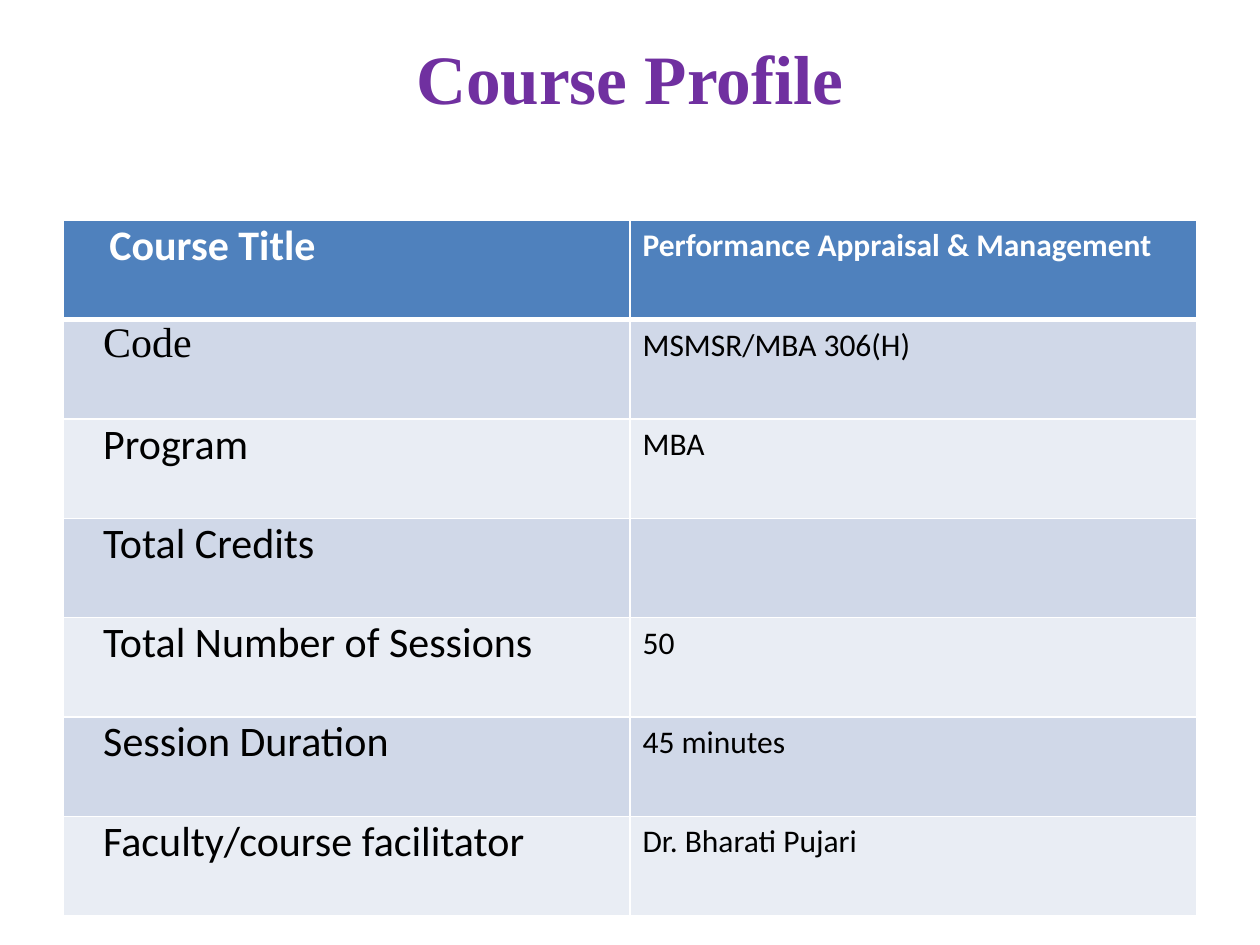
from dataclasses import dataclass

from lxml.etree import SubElement as Sub
from pptx import Presentation
from pptx.dml.color import RGBColor as Rgb
from pptx.enum.text import MSO_ANCHOR as Anchor, PP_ALIGN as Align
from pptx.oxml.ns import qn
from pptx.util import Pt


@dataclass
class Theme:
    serif: str = "Times New Roman"
    sans: str = "Calibri"
    title: str = "7030A0"
    head: str = "4F81BD"
    bands: tuple = ("D0D8E8", "E9EDF4")
    ink: str = "000000"
    white: str = "FFFFFF"
    big: float = 39.6
    label: float = 24
    value: float = 18


class Deck:
    def __init__(self, theme):
        self.theme = theme
        self.prs = Presentation()
        self.prs.slide_width, self.prs.slide_height = Pt(720), Pt(540)
        self.slide = self.prs.slides.add_slide(self.prs.slide_layouts[5])

    def style(self, para, face, size, color, bold):
        for run in para.runs:
            font = run.font
            font.name, font.size, font.bold = face, Pt(size), bold
            font.color.rgb = Rgb.from_string(color)

    def title(self, text, left, top, width, height):
        t, box = self.theme, self.slide.shapes.title
        box.left, box.top = Pt(left), Pt(top)
        box.width, box.height = Pt(width), Pt(height)
        frame = box.text_frame
        frame.text = text
        frame.vertical_anchor = Anchor.MIDDLE
        frame.margin_bottom = Pt(49)  # lifts the line above the centre
        para = frame.paragraphs[0]
        para.alignment = Align.CENTER
        self.style(para, t.serif, t.big, t.title, True)

    def edges(self, cell, head, first):
        # White rules, heavier between header and body
        props = cell._tc.get_or_add_tcPr()
        wide = {"lnB": head, "lnT": first}
        for i, side in enumerate(("lnL", "lnR", "lnT", "lnB")):
            line = Sub(props, qn("a:" + side))
            line.set("w", str(Pt(3 if wide.get(side) else 1)))
            fill = Sub(line, qn("a:solidFill"))
            Sub(fill, qn("a:srgbClr")).set("val", self.theme.white)
            props.insert(i, line)

    def cell(self, cell, text, row, col):
        t, head = self.theme, row == 0
        cell.text = text
        cell.fill.solid()
        shade = t.head if head else t.bands[(row - 1) % 2]
        cell.fill.fore_color.rgb = Rgb.from_string(shade)
        para = cell.text_frame.paragraphs[0]
        if col == 0:
            cell.margin_left = Pt(26.5 if head else 23)
            cell.margin_right = Pt(5)
            cell.margin_top = cell.margin_bottom = 0
            para.alignment = Align.LEFT if head else Align.JUSTIFY
        face = t.serif if text == "Code" else t.sans
        size = t.value if col else t.label
        self.style(para, face, size, t.white if head else t.ink, head)
        self.edges(cell, head, row == 1)

    def table(self, rows, left, top, width, height):
        frame = self.slide.shapes.add_table(
            len(rows), 2, Pt(left), Pt(top), Pt(width), Pt(height))
        grid = frame.table
        for r, pair in enumerate(rows):
            grid.rows[r].height = Pt(height / len(rows))
            for c, text in enumerate(pair):
                self.cell(grid.cell(r, c), text, r, c)


def main():
    deck = Deck(Theme())

    # Heading
    deck.title("Course Profile", 36, 21.6, 648, 90)

    # Course facts
    facts = [
        ("Course Title", "Performance Appraisal & Management"),
        ("Code", "MSMSR/MBA 306(H)"),
        ("Program", "MBA"),
        ("Total Credits", ""),
        ("Total Number of Sessions", "50"),
        ("Session Duration", "45 minutes"),
        ("Faculty/course facilitator", "Dr. Bharati Pujari"),
    ]
    deck.table(facts, 36, 126, 648, 397.4)

    deck.prs.save("out.pptx")


if __name__ == "__main__":
    main()
